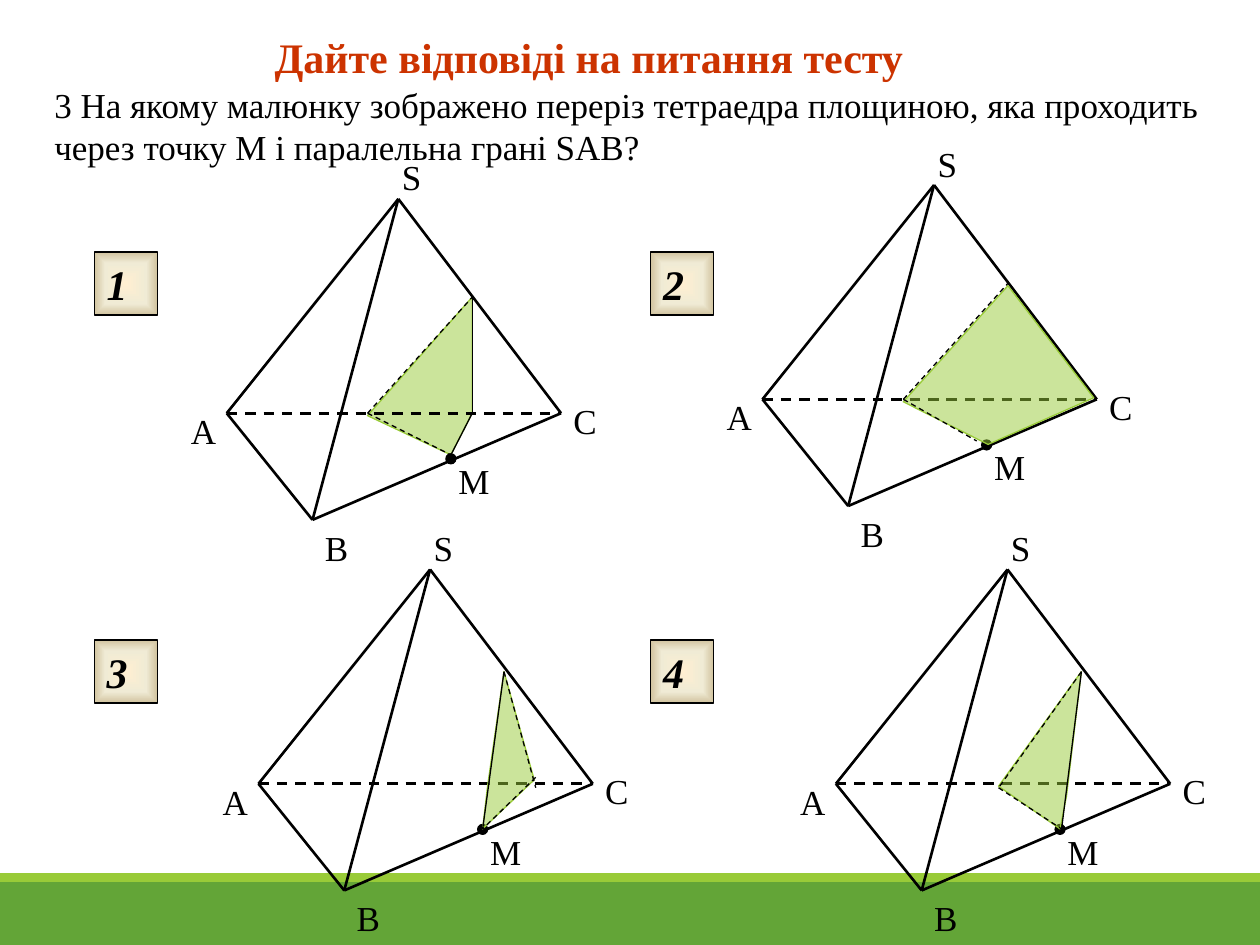
from dataclasses import dataclass
from itertools import product

from lxml.etree import SubElement
from pptx import Presentation
from pptx.dml.color import RGBColor
from pptx.enum.dml import MSO_LINE_DASH_STYLE as Dash
from pptx.enum.shapes import MSO_CONNECTOR as Link, MSO_SHAPE as Preset
from pptx.enum.text import MSO_ANCHOR as Anchor, MSO_AUTO_SIZE as AutoSize, PP_ALIGN as Align
from pptx.oxml import parse_xml
from pptx.oxml.ns import nsdecls, qn
from pptx.util import Cm, Pt


@dataclass(frozen=True)
class Theme:
    font: str = "Times New Roman"
    heading: str = "CC3300"
    ink: str = "000000"
    grass: str = "63A537"
    lime: str = "99CB38"
    button: tuple = ((0, "FFEFD1"), (65, "F0EBD5"), (100, "D1C39F"))
    large: int = 24
    normal: int = 20
    thick: float = 1.5
    thin: float = 0.75


THEME = Theme()

# Points of one tetrahedron in cm, measured from vertex A.
VERTICES = {"A": (0, 0), "B": (1.73, 2.15), "C": (6.74, 0), "S": (3.46, -4.32)}
EDGES = ("AB", "BC", "AC", "AS", "BS", "CS")
HIDDEN_EDGE = "AC"
POINT_M = (4.52, 0.92)
LABELS = {"S": (3.28, -5.31), "A": (-0.97, -0.2), "C": (6.74, -0.41),
          "B": (1.73, 2.15), "M": (4.42, 0.81)}


@dataclass(frozen=True)
class Figure:
    """A tetrahedron placed by its vertex A, with its section relative to A."""
    origin: tuple
    section: tuple
    hidden: tuple
    visible: tuple = ()
    section_behind: bool = False


FIGURES = (
    Figure((4.57, 8.33), ((4.95, -2.34), (4.95, 0), (4.52, 0.84), (2.84, 0.05)),
           (((2.84, 0), (4.95, -2.34)), ((2.84, 0), (4.52, 0.84))),
           (((4.52, 0.84), (4.95, 0)), ((4.95, 0), (4.95, -2.34))), True),
    Figure((15.37, 8.05), ((4.95, -2.29), (6.68, -0.03), (4.55, 0.91), (2.84, 0.05)),
           (((2.84, 0), (4.95, -2.34)), ((2.84, 0), (4.32, 0.84)))),
    Figure((5.21, 15.8), ((4.95, -2.26), (5.56, -0.08), (4.52, 0.91), (4.62, 0.05)),
           (((4.95, -2.26), (5.59, 0.08)), ((5.59, -0.13), (4.52, 0.91))),
           (((4.95, -2.26), (4.52, 0.91)),)),
    Figure((16.85, 15.8), ((4.95, -2.26), (4.65, 0.25), (4.52, 0.91), (3.28, 0.05)),
           (((4.95, -2.26), (3.28, 0.08)), ((3.28, 0.08), (4.55, 0.91))),
           (((4.95, -2.26), (4.55, 0.91)),)),
)


def set_all(target, **formats):
    for name, value in formats.items():
        setattr(target, name, value)


def paint(fill, color):
    fill.solid()
    fill.fore_color.rgb = RGBColor.from_string(color)


def outline(line, color, width):
    paint(line.fill, color)
    line.width = Pt(width)


def write(frame, text, size=THEME.normal, color=THEME.ink, **font):
    """Put one left-aligned paragraph into a text frame."""
    para = frame.paragraphs[0]
    set_all(para, alignment=Align.LEFT, space_before=Pt(0))
    span = para.add_run()
    span.text = text
    set_all(span.font, name=THEME.font, size=Pt(size), **font)
    span.font.color.rgb = RGBColor.from_string(color)


def fill_placeholder(holder, area, text, **font):
    left, top, width, height = map(Cm, area)
    set_all(holder, left=left, top=top, width=width, height=height)
    frame = holder.text_frame
    set_all(frame, word_wrap=True, auto_size=AutoSize.NONE, vertical_anchor=Anchor.TOP)
    write(frame, text, **font)
    props = frame.paragraphs[0]._p.get_or_add_pPr()
    props.set("marL", "0")
    props.set("indent", "0")
    SubElement(props, qn("a:buNone"))


def add_preset(shapes, preset, area, color):
    shape = shapes.add_shape(preset, *map(Cm, area))
    shape.shadow.inherit = False
    paint(shape.fill, color)
    shape.line.fill.background()
    return shape


def add_button(shapes, left, top, text):
    button = add_preset(shapes, Preset.ACTION_BUTTON_CUSTOM, (left, top, 1.27, 1.27), THEME.ink)
    outline(button.line, THEME.ink, THEME.thin)
    stops = "".join(f'<a:gs pos="{pos * 1000}"><a:srgbClr val="{color}"/></a:gs>'
                    for pos, color in THEME.button)
    gradient = parse_xml(
        f'<a:gradFill {nsdecls("a")} rotWithShape="1"><a:gsLst>{stops}</a:gsLst>'
        '<a:path path="rect"><a:fillToRect l="50000" t="50000" r="50000" b="50000"/>'
        '</a:path></a:gradFill>')
    props = button._element.spPr
    props.replace(props.find(qn("a:solidFill")), gradient)
    set_all(button.text_frame, word_wrap=False, vertical_anchor=Anchor.MIDDLE)
    write(button.text_frame, text, THEME.large, bold=True, italic=True)


def add_line(shapes, start, end, width, dashed=False):
    line = shapes.add_connector(Link.STRAIGHT, *map(Cm, (*start, *end)))
    outline(line.line, THEME.ink, width)
    if dashed:
        line.line.dash_style = Dash.DASH
    SubElement(line._element.spPr, qn("a:effectLst"))


def add_label(shapes, point, text):
    box = shapes.add_textbox(*map(Cm, (*point, 1.1, 1.1)))
    box.text_frame.word_wrap = True
    write(box.text_frame, text)


def add_section(shapes, points):
    start, *rest = [tuple(map(Cm, point)) for point in points]
    builder = shapes.build_freeform(*start)
    builder.add_line_segments(rest, close=True)
    section = builder.convert_to_shape()
    section.shadow.inherit = False
    paint(section.fill, THEME.lime)
    color = section._element.spPr.find(qn("a:solidFill"))[0]
    SubElement(color, qn("a:alpha"), val="50000")
    outline(section.line, THEME.lime, THEME.thin)


def add_tetrahedron(slide, figure):
    shapes = slide.shapes.add_group_shape().shapes

    def place(point):
        return tuple(base + shift for base, shift in zip(figure.origin, point))

    section = [place(point) for point in figure.section]
    if figure.section_behind:
        add_section(shapes, section)
    for edge in EDGES:
        start, end = (place(VERTICES[name]) for name in edge)
        add_line(shapes, start, end, THEME.thick, edge == HIDDEN_EDGE)
    x, y = place(POINT_M)
    dot = add_preset(shapes, Preset.FLOWCHART_CONNECTOR, (x - 0.1, y - 0.1, 0.2, 0.2), THEME.ink)
    outline(dot.line, THEME.ink, THEME.thin)
    for text, point in LABELS.items():
        add_label(shapes, place(point), text)
    if not figure.section_behind:
        add_section(shapes, section)
    for lines, dashed in ((figure.hidden, True), (figure.visible, False)):
        for start, end in lines:
            add_line(shapes, place(start), place(end), THEME.thin, dashed)


def main():
    deck = Presentation()
    set_all(deck, slide_width=Cm(25.4), slide_height=Cm(19.05))
    slide = deck.slides.add_slide(deck.slide_layouts[1])
    title, question = slide.placeholders
    fill_placeholder(title, (5.28, 0.5, 15.24, 1.27), "Дайте відповіді на питання тесту",
                     size=THEME.large, color=THEME.heading, bold=True)
    fill_placeholder(question, (0.84, 1.55, 23.93, 1.96),
                     "3 На якому малюнку зображено переріз тетраедра площиною, "
                     "яка проходить через точку М і паралельна грані SAВ?")
    add_preset(slide.shapes, Preset.RECTANGLE, (0, 17.78, 25.4, 1.27), THEME.grass)
    add_preset(slide.shapes, Preset.RECTANGLE, (0, 17.6, 25.4, 0.18), THEME.lime)
    for number, (top, left) in enumerate(product((5.08, 12.9), (1.9, 13.12)), 1):
        add_button(slide.shapes, left, top, str(number))
    for figure in FIGURES:
        add_tetrahedron(slide, figure)
    deck.save("out.pptx")


if __name__ == "__main__":
    main()
